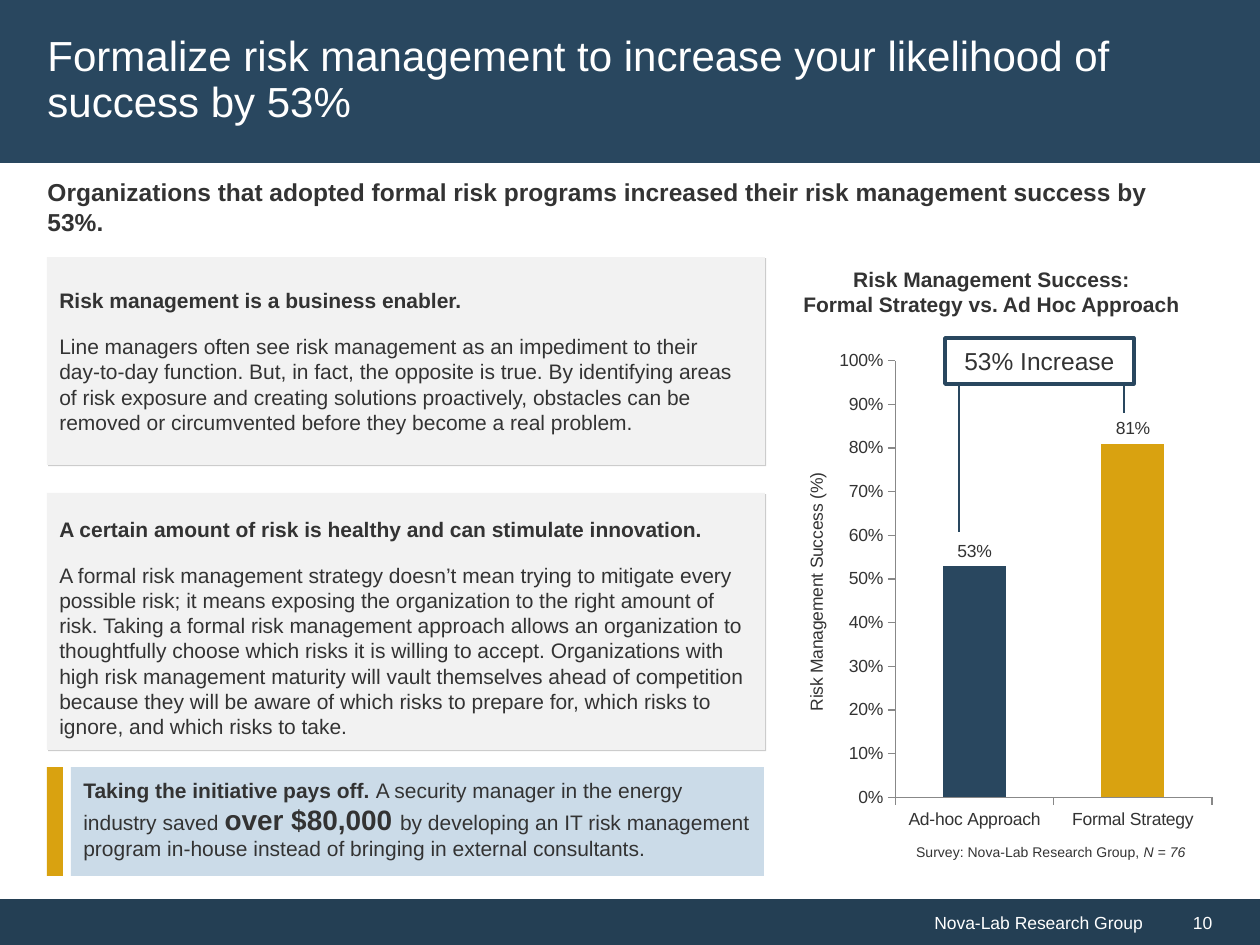
from lxml import etree
from pptx import Presentation
from pptx import util as u
from pptx.chart.data import CategoryChartData
from pptx.dml.color import RGBColor
from pptx.enum import chart, shapes, text
from pptx.oxml import parse_xml
from pptx.oxml.ns import nsdecls, qn

PX = 914400 / 126
COLORS = {
    "navy": "29475F", "footer": "243F54", "gold": "D9A210", "panel": "F2F2F2",
    "callout": "CBDBE8", "ink": "333333", "white": "FFFFFF", "axis": "888888",
}
LEFT, CENTER, RIGHT = text.PP_ALIGN.LEFT, text.PP_ALIGN.CENTER, text.PP_ALIGN.RIGHT
TOP, MIDDLE = text.MSO_ANCHOR.TOP, text.MSO_ANCHOR.MIDDLE


def px(n):
    return u.Emu(round(n * PX))


def rgb(name):
    return RGBColor.from_string(COLORS[name])


def place(element, x, y, **size):
    """Give a chart part a manual layout, in fractions of the chart."""
    layout = element.find(qn("c:layout"))
    if layout is None:
        layout = etree.Element(qn("c:layout"))
        title_text = element.find(qn("c:tx"))
        if title_text is None:
            element.insert(0, layout)
        else:
            title_text.addnext(layout)
    for child in list(layout):
        layout.remove(child)
    manual = etree.SubElement(layout, qn("c:manualLayout"))
    values = {"xMode": "edge", "yMode": "edge", "x": x, "y": y, **size}
    if size:
        values = {"layoutTarget": "inner", **values}
    for tag, value in values.items():
        etree.SubElement(manual, qn(f"c:{tag}")).set("val", str(value))


class Deck:
    font = "Arial"

    def __init__(self, prs):
        self.s = prs.slides.add_slide(prs.slide_layouts[6])

    def rect(self, x, y, w, h, fill, line=None, shadow=False):
        sp = self.s.shapes.add_shape(shapes.MSO_SHAPE.RECTANGLE, px(x), px(y), px(w), px(h))
        sp.shadow.inherit = False
        sp.fill.solid()
        sp.fill.fore_color.rgb = rgb(fill)
        if line:
            sp.line.color.rgb = rgb(line)
            sp.line.width = u.Pt(2)
        else:
            sp.line.fill.background()
        if shadow:
            sp._element.spPr.find(qn("a:effectLst")).append(parse_xml(
                f'<a:outerShdw {nsdecls("a")} blurRad="0" dist="12700" dir="2700000">'
                '<a:srgbClr val="000000"><a:alpha val="20000"/></a:srgbClr></a:outerShdw>'))
        return sp

    def label(self, sp, paragraphs, size, color="ink", bold=False, align=LEFT,
              anchor=TOP, wrap=True):
        """Fill a shape; a paragraph is a string or a list of (text, font settings)."""
        tf = sp.text_frame
        tf.word_wrap, tf.vertical_anchor = wrap, anchor
        for i, content in enumerate(paragraphs):
            p = tf.add_paragraph() if i else tf.paragraphs[0]
            p.alignment = align
            p.font.name, p.font.size, p.font.bold = self.font, u.Pt(size), bold
            p.font.color.rgb = rgb(color)
            runs = [(content, {})] if isinstance(content, str) else content
            for words, settings in runs:
                r = p.add_run()
                r.text = words
                r.font.bold = settings.get("bold")
                r.font.italic = settings.get("italic")
                r.font.size = settings.get("size")
        return tf

    def text(self, x, y, w, h, paragraphs, size, **style):
        sp = self.s.shapes.add_textbox(px(x), px(y), px(w), px(h))
        return self.label(sp, paragraphs, size, **style)

    def article(self, x, y, w, h, heading, body):
        tf = self.text(x, y, w, h, [[(heading, {"bold": True})], body], 12, anchor=MIDDLE)
        tf.paragraphs[0].space_after = u.Pt(12)
        return tf

    def line(self, x1, y1, x2, y2):
        c = self.s.shapes.add_connector(shapes.MSO_CONNECTOR.STRAIGHT,
                                        px(x1), px(y1), px(x2), px(y2))
        c.line.color.rgb = rgb("navy")
        c.line.width = u.Pt(0.75)
        etree.SubElement(c._element.spPr, qn("a:effectLst"))

    def columns(self, x, y, w, h, points, axis_title):
        """Draw a percentage column chart from (category, value, colour) points."""
        data = CategoryChartData(number_format="0%")
        data.categories = [name for name, _, _ in points]
        data.add_series("Series 1", [value for _, value, _ in points])
        ch = self.s.shapes.add_chart(chart.XL_CHART_TYPE.COLUMN_CLUSTERED,
                                     px(x), px(y), px(w), px(h), data).chart
        ch.has_legend = ch.has_title = False
        ch.font.name, ch.font.size = self.font, u.Pt(10)
        ch.font.color.rgb = rgb("ink")

        plot = ch.plots[0]
        plot.gap_width, plot.vary_by_categories = 150, False
        plot.has_data_labels = True
        labels = plot.data_labels
        labels.show_value = True
        labels.number_format, labels.number_format_is_linked = "0%", False
        labels.position = chart.XL_LABEL_POSITION.OUTSIDE_END
        for i, (_, _, color) in enumerate(points):
            fill = plot.series[0].points[i].format.fill
            fill.solid()
            fill.fore_color.rgb = rgb(color)

        for axis in (ch.category_axis, ch.value_axis):
            axis.has_major_gridlines = False
            axis.major_tick_mark = chart.XL_TICK_MARK.OUTSIDE
            axis.format.line.color.rgb = rgb("axis")
        axis = ch.value_axis
        axis.minimum_scale, axis.maximum_scale, axis.major_unit = 0, 1, 0.1
        axis.tick_labels.number_format = "0%"
        axis.tick_labels.number_format_is_linked = False
        p = axis.axis_title.text_frame.paragraphs[0]
        p.add_run().text = axis_title
        p.font.name, p.font.size, p.font.bold = self.font, u.Pt(10), False
        p.font.color.rgb = rgb("ink")
        place(axis.axis_title._element, 0.06, 0.26)
        place(ch._chartSpace.chart.plotArea, 0.27, 0.04, w=0.71, h=0.88)


def main():
    prs = Presentation()
    prs.slide_width, prs.slide_height = px(1260), px(945)
    d = Deck(prs)

    footer = d.rect(0, 899, 1155, 46, "footer")
    d.label(footer, ["Nova-Lab Research Group"], 10, "white", align=RIGHT, anchor=MIDDLE)
    number = d.rect(1155, 899, 105, 46, "footer")
    tf = d.label(number, ["10"], 10, "white", anchor=MIDDLE)
    tf.margin_left = px(38)

    d.rect(0, 0, 1260, 163, "navy")
    tf = d.text(35, 21, 1188, 118,
                ["Formalize risk management to increase your likelihood of success by 53%"],
                24, color="white", anchor=MIDDLE)
    tf.paragraphs[0].line_spacing = u.Pt(26)
    d.text(35, 171, 1188, 43,
           ["Organizations that adopted formal risk programs increased their risk "
            "management success by 53%."], 14, bold=True)

    d.rect(47, 493, 718, 257, "panel", shadow=True)
    d.rect(47, 257, 718, 208, "panel", shadow=True)
    tf = d.article(
        47, 257, 708, 208, "Risk management is a business enabler.",
        "Line managers often see risk management as an impediment to their day-to-day "
        "function. But, in fact, the opposite is true. By identifying areas of risk exposure "
        "and creating solutions proactively, obstacles can be removed or circumvented before "
        "they become a real problem.")
    tf.paragraphs[0].space_before = u.Pt(5)
    d.article(
        47, 514, 717, 227, "A certain amount of risk is healthy and can stimulate innovation.",
        "A formal risk management strategy doesn’t mean trying to mitigate every possible "
        "risk; it means exposing the organization to the right amount of risk. Taking a formal "
        "risk management approach allows an organization to thoughtfully choose which risks it "
        "is willing to accept. Organizations with high risk management maturity will vault "
        "themselves ahead of competition because they will be aware of which risks to prepare "
        "for, which risks to ignore, and which risks to take.")

    d.rect(47, 767, 16, 109, "gold")
    d.rect(71, 767, 693, 109, "callout")
    d.text(71, 771, 693, 97, [[
        ("Taking the initiative pays off. ", {"bold": True}),
        ("A security manager in the energy industry saved ", {}),
        ("over $80,000 ", {"bold": True, "size": u.Pt(16)}),
        ("by developing an IT risk management program in-house instead of bringing in "
         "external consultants.", {}),
    ]], 12)

    d.text(756, 260, 471, 63,
           ["Risk Management Success:", "Formal Strategy vs. Ad Hoc Approach"],
           12, bold=True, align=CENTER)
    d.columns(775, 341, 446, 496,
              [("Ad-hoc Approach", 0.53, "navy"), ("Formal Strategy", 0.81, "gold")],
              "Risk Management Success (%)")
    d.line(959, 532, 959, 368)
    d.line(1124, 368, 1124, 413)
    increase = d.rect(945, 338, 189, 46, "white", line="navy")
    d.label(increase, ["53% Increase"], 14, align=CENTER, anchor=MIDDLE)
    d.text(902, 837, 296, 30,
           [[("Survey: Nova-Lab Research Group, ", {}), ("N = 76", {"italic": True})]],
           8, align=RIGHT, wrap=False)

    prs.save("out.pptx")


if __name__ == "__main__":
    main()
